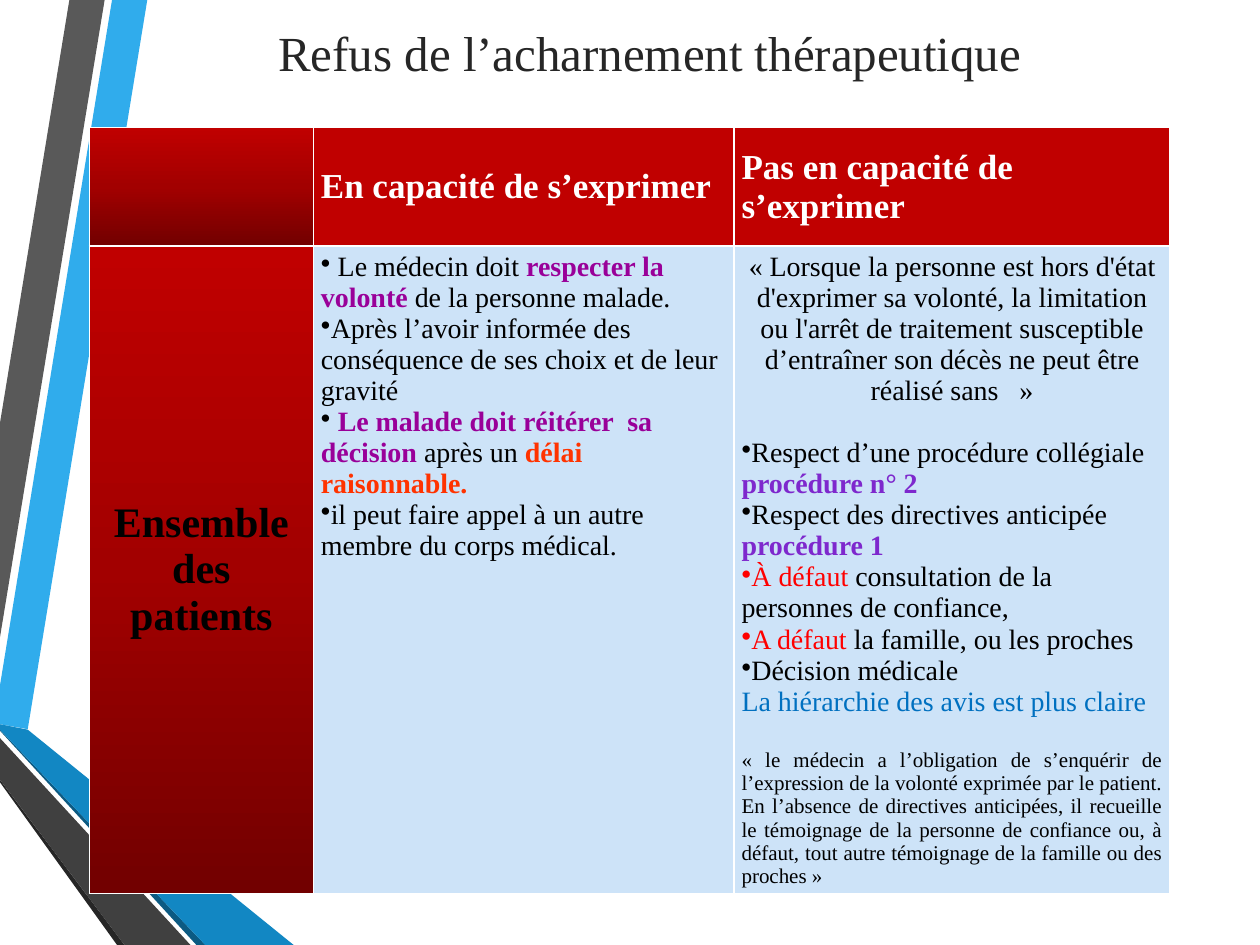
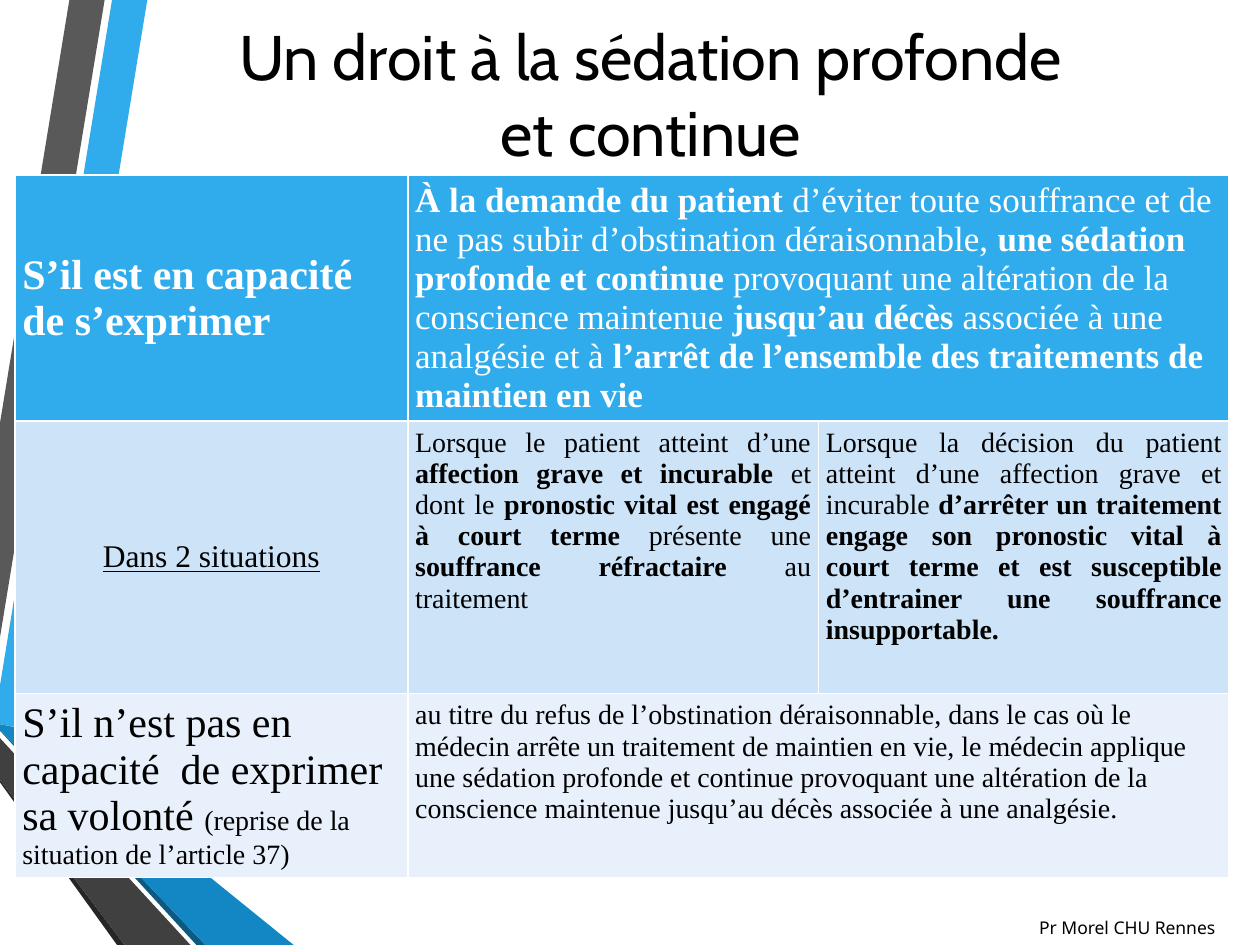
from copy import deepcopy

from pptx import Presentation
from pptx.dml.color import RGBColor
from pptx.enum.text import MSO_ANCHOR as ANCHOR, MSO_AUTO_SIZE as AUTO, PP_ALIGN as ALIGN
from pptx.oxml.ns import qn
from pptx.util import Cm, Pt
from lxml.etree import SubElement

SERIF = "Times New Roman"
BLACK, WHITE = "000000", "FFFFFF"
RED, BLUE, PALE, PALER = "C00000", "30ACEC", "CDE3F8", "E8F1FB"
GRADIENT = [(0, "720000"), (0.5, "A20000"), (1, RED)]
LINE_GAP = 17.7
ALIGNS = {"l": ALIGN.LEFT, "c": ALIGN.CENTER, "j": ALIGN.JUSTIFY, "•": ALIGN.LEFT}
MIDDLE, TOP = ANCHOR.MIDDLE, ANCHOR.TOP

BOLD = {"bold": True}
PURPLE = {"color": "990099", "bold": True}
ORANGE = {"color": "FF3300", "bold": True}
VIOLET = {"color": "7E28CD", "bold": True}
ALERT = {"color": "FF0000"}

BANDS = [
    (BLUE, [(0, 13.82), (0, 14.6), (0.56, 14.7), (2.97, 0), (2.26, 0)]),
    ("595959", [(2.11, 0), (1.4, 0), (0, 8.53), (0, 12.85)]),
    ("262626", [(0, 15.72), (0, 15.77), (2.36, 19.05), (2.51, 19.05)]),
    ("0C5A82", [(0, 14.71), (0, 14.73), (3.96, 19.05), (4.14, 19.05)]),
    ("1287C3", [(0, 14.71), (4.14, 19.05), (5.92, 19.05), (0.56, 14.71), (0, 14.6)]),
    ("404040", [(0, 15.72), (2.51, 19.05), (3.84, 19.05), (0, 14.88)]),
]

REFUSAL_CELLS = [
    (0, 0, 1, MIDDLE, GRADIENT, 20, WHITE, True, []),
    (0, 1, 1, MIDDLE, RED, 20, WHITE, True, [("l", 0, [("En capacité de s’exprimer", {})])]),
    (0, 2, 1, MIDDLE, RED, 20, WHITE, True, [("l", 0, [("Pas en capacité de s’exprimer", {})])]),
    (1, 0, 1, MIDDLE, GRADIENT, 24, BLACK, True, [("c", 0, [("Ensemble des patients", {})])]),
    (1, 1, 1, TOP, PALE, 16, BLACK, False, [
        ("•", 0, [(" Le médecin doit ", {}), ("respecter la volonté", PURPLE),
                  (" de la personne malade.", {})]),
        ("•", 0, [("Après l’avoir informée des conséquence de ses choix et de leur gravité", {})]),
        ("•", 0, [(" ", {}), ("Le malade doit réitérer  sa décision", PURPLE),
                  (" après un ", {}), ("délai raisonnable.", ORANGE)]),
        ("•", 0, [("il peut faire appel à un autre membre du corps médical.", {})]),
    ]),
    (1, 2, 1, TOP, PALE, 16, BLACK, False, [
        ("c", 0, [("« Lorsque la personne est hors d'état d'exprimer sa volonté, la limitation "
                   "ou l'arrêt de traitement susceptible d’entraîner son décès ne peut être "
                   "réalisé sans   »", {})]),
        ("•", LINE_GAP, [("Respect d’une procédure collégiale ", {}), ("procédure n° 2", VIOLET)]),
        ("•", 0, [("Respect des directives anticipée ", {}), ("procédure 1", VIOLET)]),
        ("•", 0, [("À défaut ", ALERT), ("consultation de la  personnes de confiance,", {})]),
        ("•", 0, [("A défaut ", ALERT), ("la famille, ou les proches", {})]),
        ("•", 0, [("Décision médicale", {})]),
        ("l", 0, [("La hiérarchie des avis est plus claire", {"color": "0070C0"})]),
        ("j", LINE_GAP, [("« le médecin a l’obligation de s’enquérir de l’expression de la volonté "
                          "exprimée par le patient. En l’absence de directives anticipées, il "
                          "recueille le témoignage de la personne de confiance ou, à défaut, tout "
                          "autre témoignage de la famille ou des proches »", {"size": 12})]),
    ]),
]

SEDATION_CELLS = [
    (0, 0, 1, MIDDLE, BLUE, 24, WHITE, True, [("l", 0, [("S’il est en capacité de s’exprimer", {})])]),
    (0, 1, 2, TOP, BLUE, 20, WHITE, False, [("l", 0, [
        ("À la demande du patient ", BOLD),
        ("d’éviter toute souffrance et de ne pas subir d’obstination déraisonnable, ", {}),
        ("une sédation profonde et continue ", BOLD),
        ("provoquant une altération de la conscience maintenue ", {}),
        ("jusqu’au décès ", BOLD),
        ("associée à une analgésie et à ", {}),
        ("l’arrêt de l’ensemble des traitements de maintien en vie", BOLD)])]),
    (1, 0, 1, MIDDLE, PALE, 18, BLACK, False, [("c", 0, [("Dans 2 situations", {"underline": True})])]),
    (1, 1, 1, TOP, PALE, 16, BLACK, False, [("j", 0, [
        ("Lorsque le patient atteint d’une ", {}),
        ("affection grave et incurable ", BOLD),
        ("et dont le ", {}),
        ("pronostic vital est engagé à court terme ", BOLD),
        ("présente une ", {}),
        ("souffrance réfractaire", BOLD),
        (" au traitement ", {})])]),
    (1, 2, 1, TOP, PALE, 16, BLACK, False, [("j", 0, [
        ("Lorsque la décision du patient atteint d’une affection grave et incurable ", {}),
        ("d’arrêter un traitement engage son pronostic vital à court terme et est susceptible "
         "d’entrainer une souffrance insupportable.", BOLD)])]),
    (2, 0, 1, MIDDLE, PALER, 24, BLACK, False, [("l", 0, [
        ("S’il n’est pas en capacité  de exprimer sa volonté ", {}),
        ("(reprise de la situation de l’article 37)", {"size": 16})])]),
    (2, 1, 2, TOP, PALER, 16, BLACK, False, [("l", 0, [
        ("au titre du refus de l’obstination déraisonnable, dans le cas où le médecin arrête un "
         "traitement de maintien en vie, le médecin applique une sédation profonde et continue "
         "provoquant une altération de la conscience maintenue jusqu’au décès associée à une "
         "analgésie.", {})])]),
]

SLIDES = [
    ("Refus de l’acharnement thérapeutique", (5.1, 0.25, 16, 1.58), SERIF, 28, "262626",
     (1.8, 2.57), [4.52, 8.48, 8.79], [2.39, 13.05], 0.1, REFUSAL_CELLS),
    ("Un droit à la sédation profonde et continue", (4.3, 0.91, 17.63, 1.93), "Cabin", 36, BLACK,
     (0.3, 3.53), [7.92, 8.28, 8.28], [4.93, 5.49, 3.71], 0.13, SEDATION_CELLS),
]


def style_run(r, size, color, font=SERIF, bold=False, underline=False):
    r.font.name = font
    r.font.size = Pt(size)
    r.font.bold = bold
    r.font.underline = underline
    r.font.color.rgb = RGBColor.from_string(color)


def paint(fill, color):
    fill.solid()
    fill.fore_color.rgb = RGBColor.from_string(color)


prs = Presentation()
prs.slide_width, prs.slide_height = Cm(25.4), Cm(19.05)

for title, box, font, title_size, title_color, origin, cols, rows, margin, cells in SLIDES:
    s = prs.slides.add_slide(prs.slide_layouts[5])

    for color, points in BANDS:
        outline = [(Cm(x), Cm(y)) for x, y in points]
        builder = s.shapes.build_freeform(*outline[0])
        builder.add_line_segments(outline[1:])
        band = builder.convert_to_shape()
        band.shadow.inherit = False
        band.line.fill.background()
        paint(band.fill, color)

    sp = s.shapes.title
    sp.left, sp.top, sp.width, sp.height = [Cm(v) for v in box]
    tf = sp.text_frame
    tf.text = title
    tf.word_wrap = True
    tf.auto_size = AUTO.NONE
    tf.vertical_anchor = MIDDLE
    tf.paragraphs[0].alignment = ALIGN.CENTER
    style_run(tf.paragraphs[0].runs[0], title_size, title_color, font)

    table = s.shapes.add_table(len(rows), len(cols), Cm(origin[0]), Cm(origin[1]),
                               Cm(sum(cols)), Cm(sum(rows))).table
    table.first_row = table.horz_banding = False
    for column, width in zip(table.columns, cols):
        column.width = Cm(width)
    for row, height in zip(table.rows, rows):
        row.height = Cm(height)

    for cell in table.iter_cells():
        cell.margin_left = cell.margin_right = Cm(0.15)
        cell.margin_top = cell.margin_bottom = Cm(margin)
        for side in "LRTB":
            ln = SubElement(cell._tc.tcPr, qn("a:ln" + side), w=str(Pt(1)))
            SubElement(SubElement(ln, qn("a:solidFill")), qn("a:srgbClr"), val=WHITE)

    for row, col, span, anchor, fill, size, color, bold, paragraphs in cells:
        cell = table.cell(row, col)
        if span > 1:
            cell.merge(table.cell(row, col + span - 1))
        cell.vertical_anchor = anchor
        if fill is GRADIENT:
            cell.fill.gradient()
            cell.fill.gradient_angle = 90
            first = next(cell._tc.iter(qn("a:gs")))
            first.addnext(deepcopy(first))
            for stop, (position, shade) in zip(cell.fill.gradient_stops, GRADIENT):
                stop.position = position
                stop.color.rgb = RGBColor.from_string(shade)
        else:
            paint(cell.fill, fill)

        tf = cell.text_frame
        for i, (kind, gap, runs) in enumerate(paragraphs):
            p = tf.add_paragraph() if i else tf.paragraphs[0]
            p.alignment = ALIGNS[kind]
            p.space_before = Pt(gap)
            if kind == "•":
                pPr = p._p.get_or_add_pPr()
                pPr.set("marL", "0")
                pPr.set("indent", "0")
                SubElement(pPr, qn("a:buChar"), char="•")
            for text, changes in runs:
                r = p.add_run()
                r.text = text
                style_run(r, **{"size": size, "color": color, "bold": bold, **changes})

footer = s.shapes.add_textbox(Cm(20.7), Cm(18.36), Cm(4.7), Cm(0.69))
tf = footer.text_frame
tf.word_wrap = True
tf.text = "Pr Morel CHU Rennes"
style_run(tf.paragraphs[0].runs[0], 10, BLACK, "Noto Sans")

prs.save("out.pptx")
